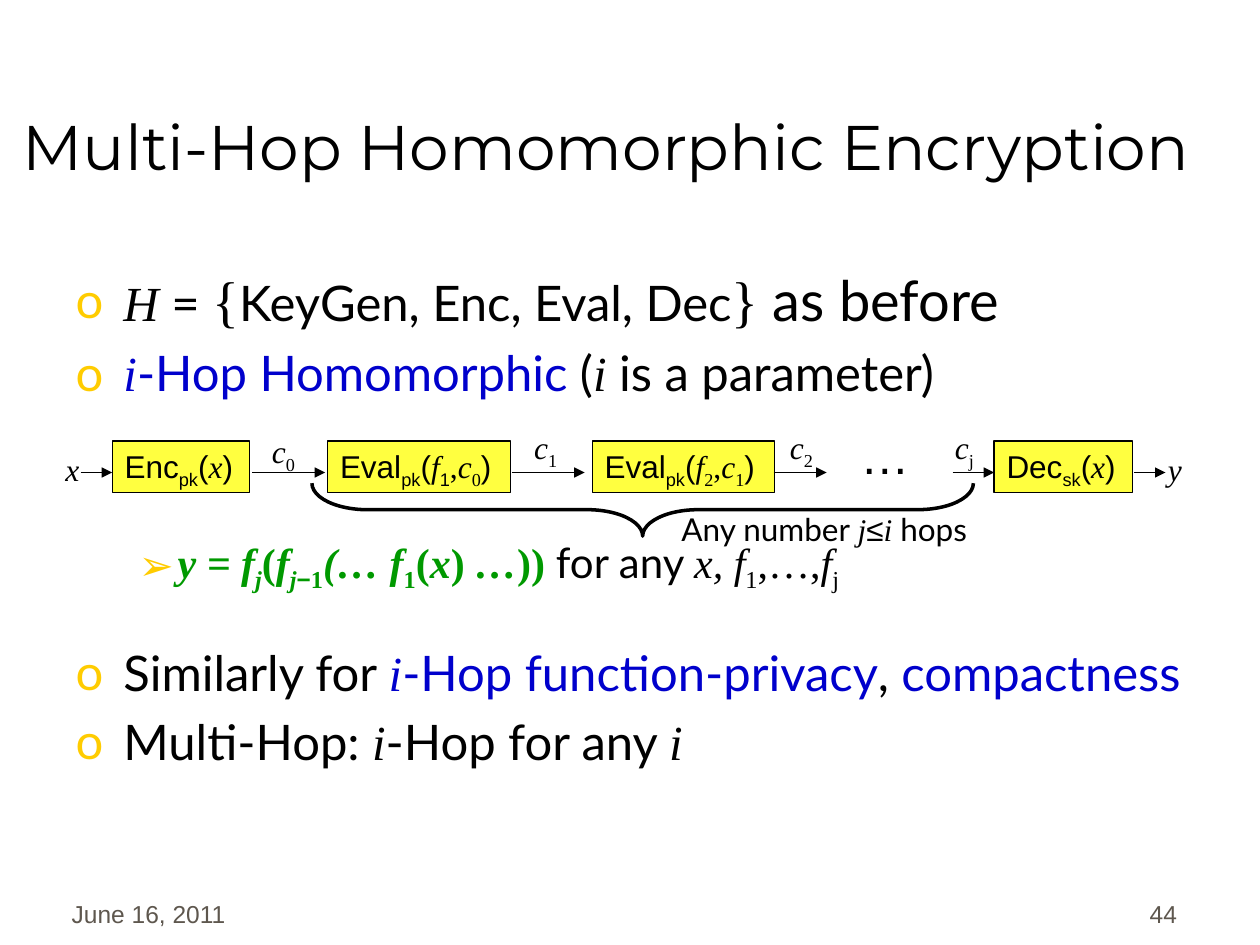
from lxml import etree
from pptx import Presentation
from pptx.dml.color import RGBColor
from pptx.enum.shapes import MSO_CONNECTOR, MSO_SHAPE
from pptx.enum.text import MSO_ANCHOR as ANCHOR, MSO_AUTO_SIZE as AUTO, PP_ALIGN as ALIGN
from pptx.oxml.ns import qn
from pptx.util import Inches, Pt

# Style letters: a capital picks the font, the rest switch on single features
FONTS = {"A": "Arial", "L": "Lato", "M": "Montserrat", "T": "Times New Roman"}
COLORS = {"k": "000000", "u": "0000CC", "g": "009900", "f": "5E574E"}
GOLD, YELLOW = "FFCC00", "FFFF00"

BOX_TOP, BOX_H = 3.5, 0.41
ARROW_Y = 3.75
LABEL_H = 0.4


def rgb(value):
    return RGBColor.from_string(value)


def sub(parent, tag, **attrs):
    return etree.SubElement(parent, qn(tag), attrs)


def add_runs(p, runs, size=18):
    """Each run is (text, style letters[, size])."""
    for text, style, *own_size in runs:
        r = p.add_run()
        r.text = text
        font = r.font
        font.size = Pt(own_size[0] if own_size else size)
        font.name = FONTS[style[0]]
        font.italic = "i" in style
        font.bold = "b" in style
        font.color.rgb = rgb(next((COLORS[c] for c in style if c in COLORS), COLORS["k"]))
        if "_" in style:
            r._r.get_or_add_rPr().set("baseline", "-25000")


def place(s, x, y, w, h):
    s.left, s.top, s.width, s.height = (Inches(v) for v in (x, y, w, h))


def add_label(slide, x, y, w, h, runs, size=18, align=ALIGN.LEFT, anchor=ANCHOR.TOP):
    tf = slide.shapes.add_textbox(*(Inches(v) for v in (x, y, w, h))).text_frame
    tf.word_wrap = False
    tf.vertical_anchor = anchor
    p = tf.paragraphs[0]
    p.alignment = align
    add_runs(p, runs, size)


def add_shape(slide, kind, x, y, w, h, line_width):
    sp = slide.shapes.add_shape(kind, *(Inches(v) for v in (x, y, w, h)))
    sp.shadow.inherit = False
    sp.line.color.rgb = rgb(COLORS["k"])
    sp.line.width = Pt(line_width)
    return sp


def add_step(slide, x, w, name, key, args):
    """Yellow box holding name_key(args)."""
    sp = add_shape(slide, MSO_SHAPE.RECTANGLE, x, BOX_TOP, w, BOX_H, 0.75)
    sp.fill.solid()
    sp.fill.fore_color.rgb = rgb(YELLOW)
    sub(sp.fill._xPr.find(".//" + qn("a:srgbClr")), "a:alpha", val="75000")
    tf = sp.text_frame
    tf.word_wrap = False
    tf.vertical_anchor = ANCHOR.TOP
    p = tf.paragraphs[0]
    p.alignment = ALIGN.LEFT
    add_runs(p, [(name, "A"), (key, "A_"), ("(", "A"), *args, (")", "A")])


def add_arrow(slide, x1, x2):
    line = slide.shapes.add_connector(
        MSO_CONNECTOR.STRAIGHT, Inches(x1), Inches(ARROW_Y), Inches(x2), Inches(ARROW_Y))
    line.line.color.rgb = rgb(COLORS["k"])
    line.line.width = Pt(0.75)
    sub(line.line._get_or_add_ln(), "a:tailEnd", type="triangle")
    sub(line._element.spPr, "a:effectLst")


def add_brace(slide):
    sp = add_shape(slide, MSO_SHAPE.RIGHT_BRACE, 4.89, 1.42, 0.42, 5.25, 2)
    sp.fill.background()
    sp.adjustments[0], sp.adjustments[1] = 1.05, 0.5
    sp.rotation = 270
    sp._element.spPr.xfrm.set("flipH", "1")


def add_item(tf, runs, size=28, level=0, gap=0.2):
    """Bulleted paragraph; gap is a share of the text size."""
    first = not tf.paragraphs[0].runs
    p = tf.paragraphs[0] if first else tf.add_paragraph()
    p.level = level
    margin, hang, mark = ((0.38, 0.38, "o"), (0.81, 0.31, "➢"))[level]
    pPr = p._p.get_or_add_pPr()
    pPr.set("marL", str(Inches(margin)))
    pPr.set("indent", str(-Inches(hang)))
    sub(sub(pPr, "a:buClr"), "a:srgbClr", val=GOLD)
    sub(pPr, "a:buFont", typeface=FONTS["L"])
    sub(pPr, "a:buChar", char=mark)
    p.space_before = Pt(0 if first else round(size * gap, 1))
    add_runs(p, runs, size)


def add_title(slide):
    title = slide.shapes.title
    place(title, 0.08, 0.25, 9.92, 1.25)
    tf = title.text_frame
    tf.auto_size = AUTO.NONE
    tf.vertical_anchor = ANCHOR.BOTTOM
    tf.paragraphs[0].alignment = ALIGN.LEFT
    add_runs(tf.paragraphs[0], [("Multi-Hop Homomorphic Encryption", "M")], 36)


def add_body(slide):
    body = slide.placeholders[1]
    place(body, 0.5, 2.06, 9.33, 4.52)
    tf = body.text_frame
    tf.auto_size = AUTO.NONE
    add_item(tf, [("H", "Ti"), (" = ", "L"), ("{", "T", 32), ("KeyGen, Enc, Eval, Dec", "L"),
                  ("}", "T", 32), (" as before", "L", 32)])
    add_item(tf, [("i", "Tiu"), ("-Hop Homomorphic", "Lu"), (" (", "L"), ("i", "Ti"),
                  (" is a parameter)", "L")])
    add_item(tf, [("y = f", "Tbig"), ("j", "Tbig_"), ("(", "Tbg"), ("f", "Tbig"),
                  ("j", "Tbig_"), ("−", "Abg_"), ("1", "Tbg_"), ("(… f", "Tbig"),
                  ("1", "Tbg_"), ("(", "Tbg"), ("x", "Tbig"), (")", "Tbg"), (" …", "Tbig"),
                  ("))", "Tbg"), (" for any ", "L"), ("x, f", "Ti"), ("1", "T_"),
                  (",…,", "T"), ("f", "Ti"), ("j", "T_")], size=24, level=1, gap=3.2)
    add_item(tf, [("Similarly for ", "L"), ("i", "Tiu"), ("-Hop function-privacy", "Lu"),
                  (", ", "L"), ("compactness", "Lu")], gap=1)
    add_item(tf, [("Multi-Hop: ", "L"), ("i", "Ti"), ("-Hop for any ", "L"), ("i", "Ti")])


def add_chain(slide):
    # Steps
    x_arg = [("x", "Ti")]
    add_step(slide, 0.89, 1.09, "Enc", "pk", x_arg)
    for x, f, f_style, c in ((2.6, "1", "A_", "0"), (4.7, "2", "T_", "1")):
        add_step(slide, x, 1.45, "Eval", "pk",
                 [("f", "Ti"), (f, f_style), (",", "T"), ("c", "Ti"), (c, "T_")])
    add_step(slide, 7.89, 1.1, "Dec", "sk", x_arg)

    # Arrows
    for x1, x2 in ((0.64, 0.89), (2, 2.58), (4.06, 4.64), (6.14, 6.56), (7.56, 7.89), (9, 9.25)):
        add_arrow(slide, x1, x2)

    # Ciphertexts, input and output
    for x, y, w, index in ((2.06, 3.38, 0.39, "0"), (4.14, 3.35, 0.39, "1"),
                           (6.17, 3.35, 0.39, "2"), (7.48, 3.35, 0.36, "j")):
        add_label(slide, x, y, w, LABEL_H, [("c", "Ti"), (index, "T_")])
    for x, name in ((0.42, "x"), (9.17, "y")):
        add_label(slide, x, 3.52, 0.31, LABEL_H, [(name, "Ti")])
    add_label(slide, 6.73, 3.33, 0.59, 0.57, [("…", "A")], size=28)

    # Brace over the hops
    add_brace(slide)
    add_label(slide, 5.31, 4, 2.48, LABEL_H, [("Any number ", "L"), ("j", "Ti"), ("≤", "A"),
                                             ("i ", "Ti"), ("hops", "L")])


def add_footer(slide):
    for x, text, align in ((0.47, "June 16, 2011", ALIGN.LEFT), (7.36, "44", ALIGN.RIGHT)):
        add_label(slide, x, 6.92, 2.08, 0.5, [(text, "Af")], size=14, align=align,
                  anchor=ANCHOR.BOTTOM)


def main():
    prs = Presentation()
    prs.slide_width, prs.slide_height = Inches(10), Inches(7.5)
    slide = prs.slides.add_slide(prs.slide_layouts[1])
    add_footer(slide)
    add_title(slide)
    add_body(slide)
    add_chain(slide)
    prs.save("out.pptx")


if __name__ == "__main__":
    main()
